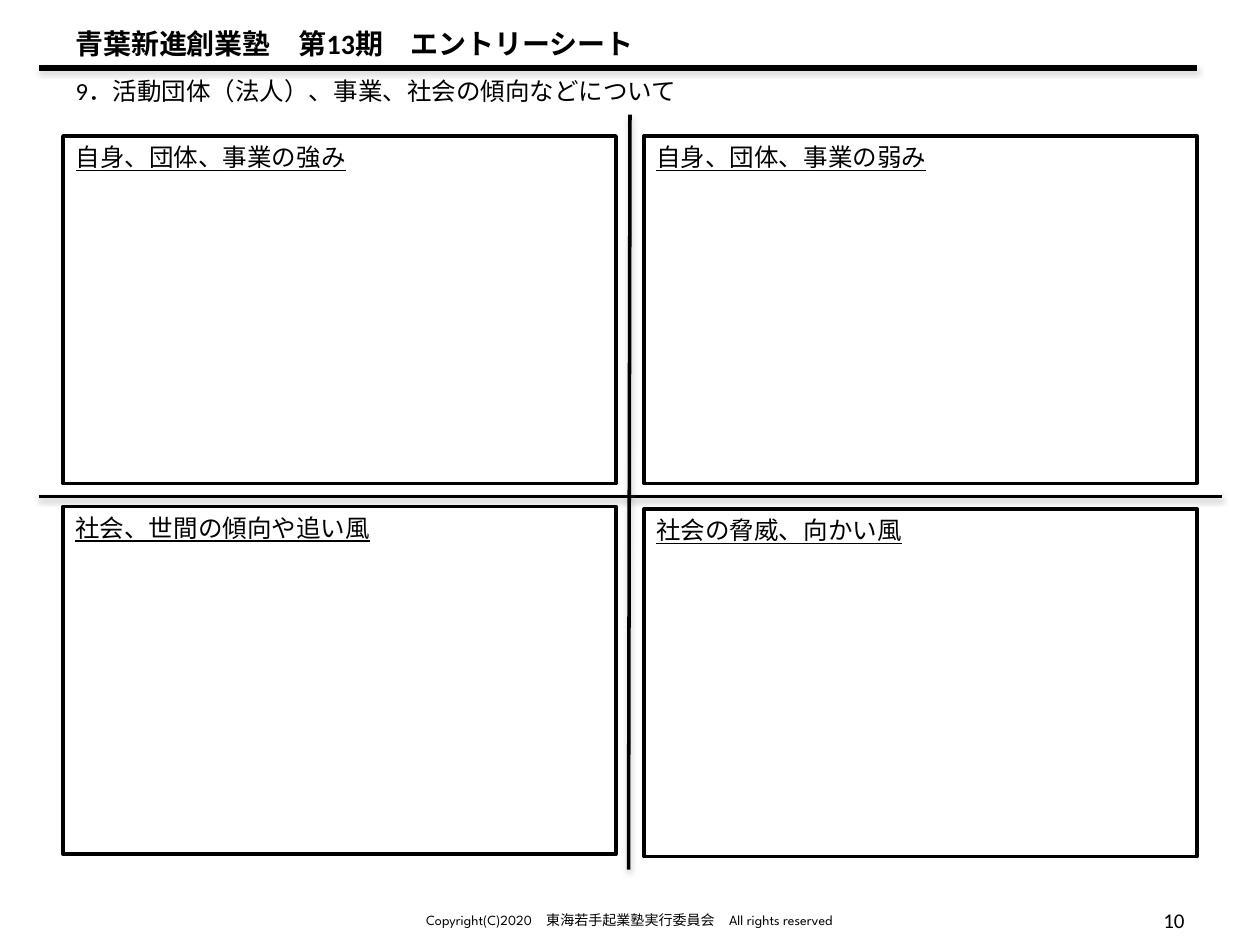
from dataclasses import dataclass

from lxml.etree import SubElement
from pptx import Presentation
from pptx.dml.color import RGBColor
from pptx.enum.shapes import MSO_CONNECTOR, MSO_SHAPE
from pptx.enum.text import MSO_ANCHOR, MSO_AUTO_SIZE, PP_ALIGN
from pptx.oxml.ns import qn
from pptx.shapes.autoshape import Shape
from pptx.slide import Slide
from pptx.util import Cm, Pt

INK = "000000"
PAPER = "FFFFFF"
MARGIN = 1.27
RIGHT_COLUMN = 12.98
QUADRANT_WIDTH = 11.15
QUADRANT_HEIGHT = 7.01
TOP_ROW = 2.74
FOOTER_TOP = 18.03
FOOTER_HEIGHT = 1.02


@dataclass
class Area:
    left: float
    top: float
    width: float
    height: float


@dataclass
class Label:
    text: str
    size: float
    font: str = "Calibri"
    bold: bool = False
    underline: bool = False
    align: PP_ALIGN = PP_ALIGN.LEFT
    anchor: MSO_ANCHOR = MSO_ANCHOR.TOP


@dataclass
class Rule:
    start: tuple[float, float]
    end: tuple[float, float]
    weight: float


@dataclass
class Quadrant:
    heading: str
    left: float
    top: float


STRENGTHS = Quadrant("自身、団体、事業の強み", MARGIN, TOP_ROW)
OTHER_QUADRANTS = [
    Quadrant("自身、団体、事業の弱み", RIGHT_COLUMN, TOP_ROW),
    Quadrant("社会、世間の傾向や追い風", MARGIN, 10.21),
    Quadrant("社会の脅威、向かい風", RIGHT_COLUMN, 10.26),
]
RULES = [
    Rule((0.79, 1.37), (24.13, 1.37), 3),
    Rule((0.79, 10.01), (24.64, 10.01), 2),
    Rule((12.7, 2.31), (12.67, 17.53), 2),
]


def color(code: str) -> RGBColor:
    """Turn a hex string into a colour."""
    return RGBColor.from_string(code)


def place(shape: Shape, area: Area) -> None:
    """Move and size a shape."""
    shape.left, shape.top = Cm(area.left), Cm(area.top)
    shape.width, shape.height = Cm(area.width), Cm(area.height)


def write(shape: Shape, label: Label) -> None:
    """Fill a shape with one formatted paragraph without a bullet."""
    frame = shape.text_frame
    frame.word_wrap = True
    frame.auto_size = MSO_AUTO_SIZE.NONE
    frame.vertical_anchor = label.anchor
    frame.text = label.text
    paragraph = frame.paragraphs[0]
    paragraph.alignment = label.align
    paragraph.space_before = Pt(0)
    properties = paragraph._p.get_or_add_pPr()
    properties.set("marL", "0")
    properties.set("indent", "0")
    SubElement(properties, qn("a:buNone"))
    font = paragraph.font
    font.name, font.size = label.font, Pt(label.size)
    font.bold, font.underline = label.bold, label.underline
    font.color.rgb = color(INK)


def add_label(slide: Slide, area: Area, label: Label) -> None:
    """Add a text box."""
    box = slide.shapes.add_textbox(0, 0, 0, 0)
    place(box, area)
    write(box, label)


def add_rule(slide: Slide, rule: Rule) -> None:
    """Add a straight line with a soft shadow below it."""
    line = slide.shapes.add_connector(
        MSO_CONNECTOR.STRAIGHT, *map(Cm, rule.start + rule.end)
    )
    line.line.color.rgb = color(INK)
    line.line.width = Pt(rule.weight)
    effects = SubElement(line._element.spPr, qn("a:effectLst"))
    shadow = SubElement(
        effects, qn("a:outerShdw"),
        blurRad="40000", dist="20000", dir="5400000", rotWithShape="0",
    )
    tint = SubElement(shadow, qn("a:srgbClr"), val="808080")
    SubElement(tint, qn("a:alpha"), val="38000")


def draw_quadrant(shape: Shape, quadrant: Quadrant) -> None:
    """Format a shape as a framed quadrant with its heading."""
    place(shape, Area(quadrant.left, quadrant.top, QUADRANT_WIDTH, QUADRANT_HEIGHT))
    shape.shadow.inherit = False
    shape.fill.solid()
    shape.fill.fore_color.rgb = color(PAPER)
    shape.line.color.rgb = color(INK)
    shape.line.width = Pt(2)
    write(shape, Label(quadrant.heading, 14, underline=True))


def main() -> None:
    """Build the entry sheet and save it."""
    deck = Presentation()
    deck.slide_width, deck.slide_height = Cm(25.4), Cm(19.05)
    slide = deck.slides.add_slide(deck.slide_layouts[1])
    title, strengths = slide.placeholders

    place(title, Area(MARGIN, 1.37, 22.86, 0.91))
    write(title, Label("9．活動団体（法人）、事業、社会の傾向などについて", 14,
                       anchor=MSO_ANCHOR.MIDDLE))
    add_label(slide, Area(MARGIN, 0.41, 22.86, 1.88),
              Label("青葉新進創業塾　第13期　エントリーシート", 16, bold=True))
    draw_quadrant(strengths, STRENGTHS)
    for rule in RULES:
        add_rule(slide, rule)
    for quadrant in OTHER_QUADRANTS:
        frame = slide.shapes.add_shape(MSO_SHAPE.RECTANGLE, 0, 0, 0, 0)
        draw_quadrant(frame, quadrant)

    add_label(slide, Area(18.21, FOOTER_TOP, 5.92, FOOTER_HEIGHT),
              Label("10", 12, align=PP_ALIGN.RIGHT, anchor=MSO_ANCHOR.MIDDLE))
    add_label(slide, Area(7.19, FOOTER_TOP, 11, FOOTER_HEIGHT),
              Label("Copyright(C)2020　東海若手起業塾実行委員会　All rights reserved", 8,
                    font="League Spartan", align=PP_ALIGN.CENTER,
                    anchor=MSO_ANCHOR.MIDDLE))
    deck.save("out.pptx")


if __name__ == "__main__":
    main()
